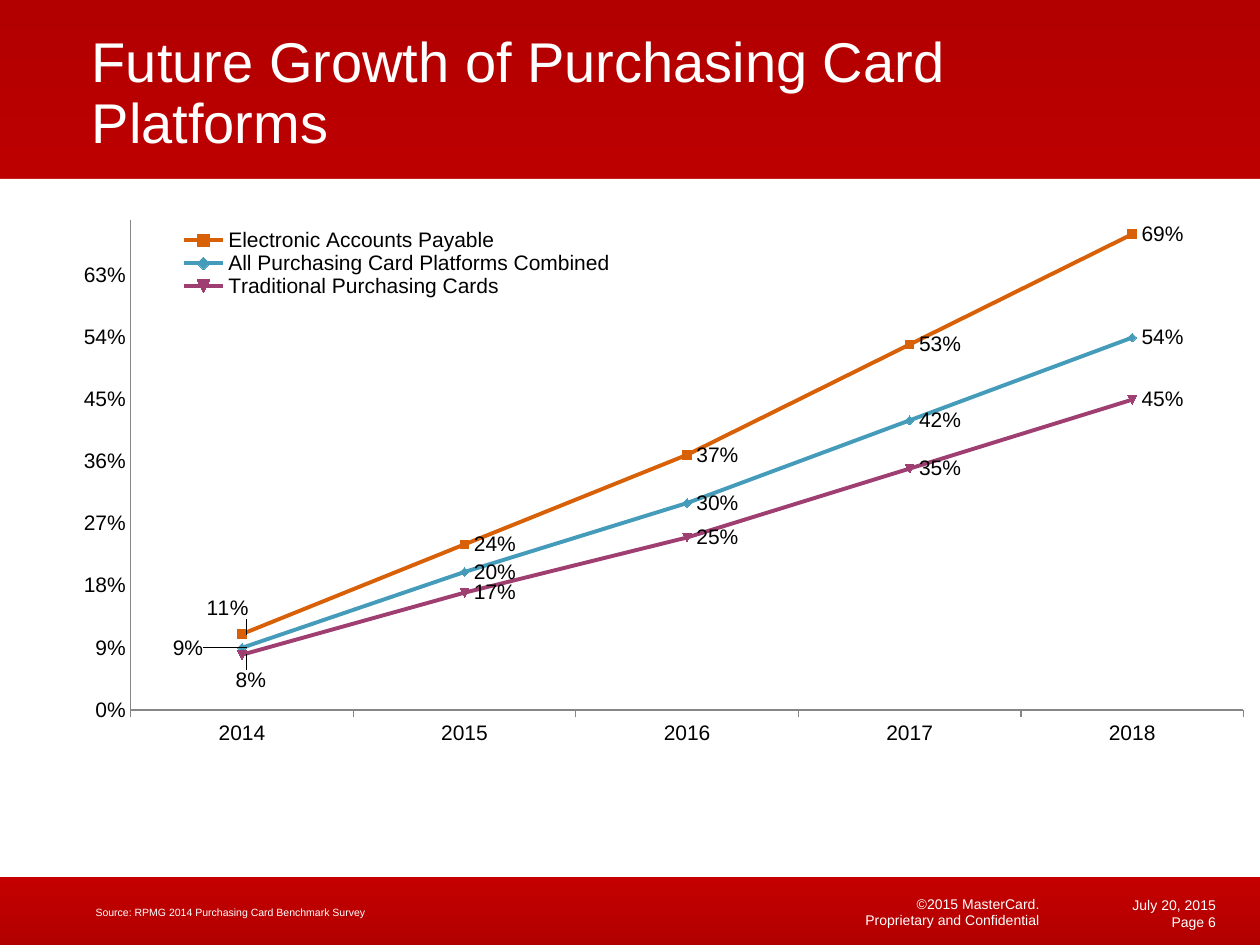
from lxml.etree import SubElement
from pptx import Presentation
from pptx.chart.data import CategoryChartData
from pptx.dml.color import RGBColor
from pptx.enum.chart import (XL_CHART_TYPE, XL_LABEL_POSITION, XL_LEGEND_POSITION,
                             XL_MARKER_STYLE, XL_TICK_MARK)
from pptx.enum.shapes import MSO_SHAPE
from pptx.enum.text import MSO_ANCHOR, PP_ALIGN
from pptx.oxml import parse_xml
from pptx.oxml.ns import nsdecls, qn
from pptx.util import Inches, Pt

WHITE = RGBColor(0xFF, 0xFF, 0xFF)
BLACK = RGBColor(0, 0, 0)
DARK_RED = RGBColor(0xB2, 0, 0)
BRIGHT_RED = RGBColor(0xE6, 0, 0)
GRAY = RGBColor(0x86, 0x86, 0x86)
ORANGE = RGBColor(0xD8, 0x60, 0x06)
BLUE = RGBColor(0x44, 0x9B, 0xBA)
PLUM = RGBColor(0x9F, 0x3F, 0x71)

COLUMNS, ROWS = 100, 75
YEARS = ["2014", "2015", "2016", "2017", "2018"]
PLATFORMS = [
    ("Electronic Accounts Payable", [0.11, 0.24, 0.37, 0.53, 0.69], ORANGE, (-0.037, -0.041)),
    ("All Purchasing Card Platforms Combined", [0.09, 0.20, 0.30, 0.42, 0.54], BLUE, (-0.065, 0)),
    ("Traditional Purchasing Cards", [0.08, 0.17, 0.25, 0.35, 0.45], PLUM, (-0.013, 0.041)),
]


def manual_layout(**values):
    layout = parse_xml(f"<c:layout {nsdecls('c')}><c:manualLayout/></c:layout>")
    for name, value in values.items():
        SubElement(layout[0], qn(f"c:{name}")).set("val", str(value))
    return layout


class GrowthSlide:
    font = "Arial"

    def __init__(self, presentation):
        self.slide = presentation.slides.add_slide(presentation.slide_layouts[6])
        self.cell_width = presentation.slide_width / COLUMNS
        self.cell_height = presentation.slide_height / ROWS

    def place(self, column, row, columns, rows):
        return (round(column * self.cell_width), round(row * self.cell_height),
                round(columns * self.cell_width), round(rows * self.cell_height))

    def panel(self, cells):
        shape = self.slide.shapes.add_shape(MSO_SHAPE.RECTANGLE, *self.place(*cells))
        shape.shadow.inherit = False
        shape.line.fill.background()
        return shape.fill

    def solid_panel(self, cells, color):
        fill = self.panel(cells)
        fill.solid()
        fill.fore_color.rgb = color

    def gradient_panel(self, cells, stops):
        fill = self.panel(cells)
        fill.gradient()
        fill.gradient_angle = 90
        stop_list = self.slide.shapes[-1].element.xpath(".//a:gsLst")[0]
        for stop in list(stop_list):
            stop_list.remove(stop)
        for percent, color in stops:
            stop = SubElement(stop_list, qn("a:gs"), pos=str(percent * 1000))
            SubElement(stop, qn("a:srgbClr"), val=str(color))

    def text(self, cells, lines, size, align=PP_ALIGN.LEFT, anchor=MSO_ANCHOR.TOP,
             spacing=1.0, inset=0.05):
        frame = self.slide.shapes.add_textbox(*self.place(*cells)).text_frame
        frame.word_wrap = True
        frame.vertical_anchor = anchor
        frame.margin_top = frame.margin_bottom = Inches(inset)
        paragraph = frame.paragraphs[0]
        paragraph.alignment = align
        paragraph.line_spacing = spacing
        for index, line in enumerate(lines):
            if index:
                paragraph.add_line_break()
            run = paragraph.add_run()
            run.text = line
            run.font.name = self.font
            run.font.size = Pt(size)
            run.font.color.rgb = WHITE

    def line_chart(self, cells, categories, platforms):
        data = CategoryChartData(number_format="0%")
        data.categories = categories
        for name, values, *_ in platforms:
            data.add_series(name, values)
        chart = self.slide.shapes.add_chart(
            XL_CHART_TYPE.LINE_MARKERS, *self.place(*cells), data).chart
        chart.has_title = False
        chart.font.name = self.font
        chart.font.size = Pt(12)
        chart.font.color.rgb = BLACK
        self.style_axes(chart)
        for series, (_, _, color, offset) in zip(chart.plots[0].series, platforms):
            self.style_series(series, color)
            label = chart.element.xpath(".//c:ser")[series.index].xpath(".//c:dLbl")[0]
            label.insert(1, manual_layout(x=offset[0], y=offset[1]))
        self.arrange(chart)

    def style_axes(self, chart):
        value_axis, category_axis = chart.value_axis, chart.category_axis
        value_axis.minimum_scale, value_axis.maximum_scale = 0, 0.71
        value_axis.major_unit = 0.09
        value_axis.has_major_gridlines = False
        value_axis.major_tick_mark = XL_TICK_MARK.NONE
        value_axis.tick_labels.number_format = "0%"
        value_axis.tick_labels.number_format_is_linked = False
        category_axis.major_tick_mark = XL_TICK_MARK.OUTSIDE
        for axis in (value_axis, category_axis):
            axis.format.line.color.rgb = GRAY
            axis.format.line.width = Pt(0.75)

    def style_series(self, series, color):
        series.smooth = False
        series.format.line.color.rgb = color
        series.format.line.width = Pt(2.25)
        series.marker.style = XL_MARKER_STYLE.AUTOMATIC
        series.marker.size = 5
        series.marker.format.fill.solid()
        series.marker.format.fill.fore_color.rgb = color
        series.marker.format.line.color.rgb = color
        labels = series.data_labels
        labels.show_value = True
        labels.number_format = "0%"
        labels.number_format_is_linked = False
        labels.position = XL_LABEL_POSITION.RIGHT
        series.points[0].data_label.position = XL_LABEL_POSITION.RIGHT

    def arrange(self, chart):
        chart.plots[0].vary_by_categories = False
        chart.has_legend = True
        chart.legend.position = XL_LEGEND_POSITION.BOTTOM
        chart.legend.include_in_layout = False
        for layout in chart.element.xpath(".//c:plotArea/c:layout | .//c:legend/c:layout"):
            layout.getparent().remove(layout)
        chart.element.xpath(".//c:plotArea")[0].insert(0, manual_layout(
            layoutTarget="inner", xMode="edge", yMode="edge", x=0.055, y=0.032, w=0.92, h=0.777))
        chart.element.xpath(".//c:legend")[0].insert(1, manual_layout(
            xMode="edge", yMode="edge", x=0.085, y=0.045, w=0.38, h=0.11))


def main():
    presentation = Presentation()
    presentation.slide_width, presentation.slide_height = Inches(10), Inches(7.5)
    page = GrowthSlide(presentation)
    page.gradient_panel((0, 0, COLUMNS, ROWS),
                        [(0, DARK_RED), (19, BRIGHT_RED), (100, DARK_RED)])
    page.solid_panel((0, 14.2, COLUMNS, 55.4), WHITE)
    page.text((59.2, 70.8, 24.3, 3.3), ["©2015 MasterCard.", "Proprietary and Confidential"], 8,
              PP_ALIGN.RIGHT, MSO_ANCHOR.MIDDLE, 0.95, 0)
    page.text((6.3, 3.9, 81.5, 8.9), ["Future Growth of Purchasing Card Platforms"], 32,
              anchor=MSO_ANCHOR.BOTTOM, spacing=0.9)
    page.line_chart((5.1, 15.9, 96, 50), YEARS, PLATFORMS)
    page.text((6.6, 71.5, 63.1, 1.9), ["Source: RPMG 2014 Purchasing Card Benchmark Survey"], 6,
              spacing=0.9)
    page.text((83.5, 70.8, 14, 1.7), ["July 20, 2015"], 8, PP_ALIGN.RIGHT,
              MSO_ANCHOR.BOTTOM, inset=0)
    page.text((83.5, 72.5, 14, 1.8), ["Page 6"], 8, PP_ALIGN.RIGHT, inset=0)
    presentation.save("out.pptx")


if __name__ == "__main__":
    main()
